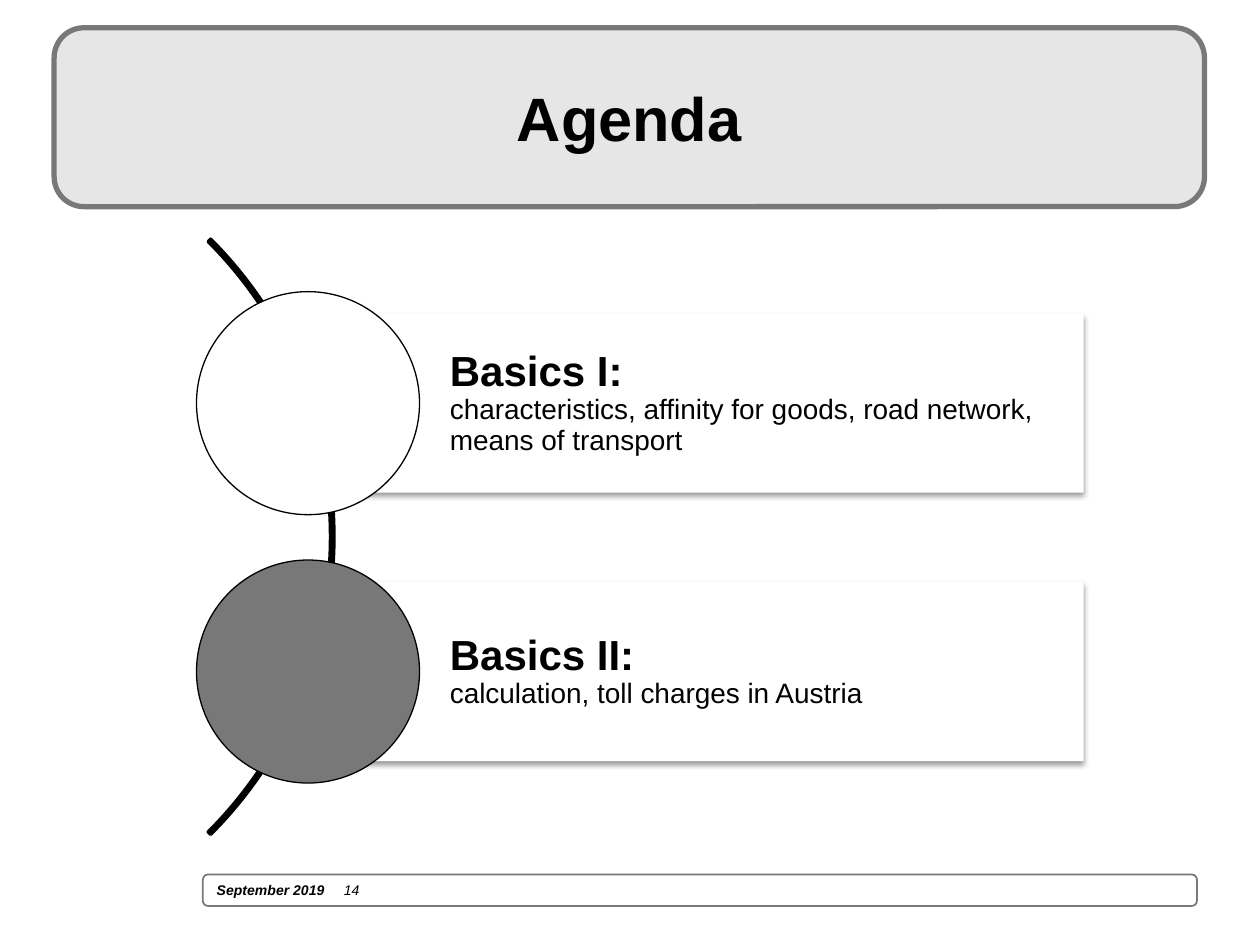
from lxml import etree
from pptx import Presentation
from pptx.dml.color import RGBColor
from pptx.enum.shapes import MSO_SHAPE as Shape
from pptx.enum.text import MSO_ANCHOR as Anchor, PP_ALIGN as Align
from pptx.oxml.ns import qn
from pptx.util import Inches, Pt

BLACK = RGBColor(0x00, 0x00, 0x00)
WHITE = RGBColor(0xFF, 0xFF, 0xFF)
GRAY = RGBColor(0x78, 0x78, 0x78)
LIGHT_GRAY = RGBColor(0xE7, 0xE6, 0xE6)

TOPICS = [
    ("Basics I:", "characteristics, affinity for goods, road network, means of transport", WHITE),
    ("Basics II:", "calculation, toll charges in Austria", GRAY),
]
FIRST_CENTER = 3.2
TOPIC_STEP = 2.13
CARD_HEIGHT = 1.42
CIRCLE_SIZE = 1.77


class AgendaSlide:
    font_name = "Arial"

    def __init__(self, presentation):
        self.slide = presentation.slides.add_slide(presentation.slide_layouts[6])

    def shape(self, kind, left, top, width, height, fill=None, line=None, line_width=1):
        shape = self.slide.shapes.add_shape(
            kind, Inches(left), Inches(top), Inches(width), Inches(height))
        shape.shadow.inherit = False
        if fill is None:
            shape.fill.background()
        else:
            shape.fill.solid()
            shape.fill.fore_color.rgb = fill
        if line is None:
            shape.line.fill.background()
        else:
            shape.line.color.rgb = line
            shape.line.width = Pt(line_width)
        return shape

    def run(self, paragraph, text, size, **styles):
        run = paragraph.add_run()
        run.text = text
        run.font.color.rgb = BLACK
        formats = {"name": self.font_name, "size": Pt(size), **styles}
        for name, value in formats.items():
            setattr(run.font, name, value)

    def text_frame(self, shape, **formats):
        frame = shape.text_frame
        formats = {"word_wrap": True, "vertical_anchor": Anchor.MIDDLE, **formats}
        for name, value in formats.items():
            setattr(frame, name, value)
        frame.paragraphs[0].alignment = Align.LEFT
        return frame

    def drop_shadow(self, shape):
        """Give the shape a soft shadow straight below it."""
        effects = shape._element.spPr.find(qn("a:effectLst"))
        shadow = etree.SubElement(
            effects, qn("a:outerShdw"), blurRad=str(Pt(3.1)), dist=str(Pt(1.6)),
            dir="5400000", rotWithShape="0")
        color = etree.SubElement(shadow, qn("a:srgbClr"), val=str(BLACK))
        etree.SubElement(color, qn("a:alpha"), val="38000")

    def title(self, text):
        banner = self.shape(Shape.ROUNDED_RECTANGLE, 0.43, 0.22, 9.13, 1.42,
                            LIGHT_GRAY, GRAY, 3)
        paragraph = self.text_frame(banner).paragraphs[0]
        paragraph.alignment = Align.CENTER
        self.run(paragraph, text, 35, bold=True)

    def footer(self, date, number):
        bar = self.shape(Shape.ROUNDED_RECTANGLE, 1.61, 6.94, 7.89, 0.25, WHITE, GRAY)
        paragraph = self.text_frame(bar).paragraphs[0]
        tabs = etree.SubElement(paragraph._p.get_or_add_pPr(), qn("a:tabLst"))
        etree.SubElement(tabs, qn("a:tab"), pos=str(Inches(1.01)), algn="l")
        self.run(paragraph, date + "\t", 8, bold=True, italic=True)
        self.run(paragraph, number, 8, bold=False, italic=True)

    def arc(self):
        arc = self.shape(Shape.BLOCK_ARC, -4.03, 0.92, 6.68, 6.68, line=BLACK, line_width=2)
        for index, value in enumerate((189, 27, 0.004)):
            arc.adjustments[index] = value

    def topic(self, center, heading, details, color):
        card = self.shape(Shape.RECTANGLE, 2.45, center - CARD_HEIGHT / 2,
                          6.15, CARD_HEIGHT, WHITE)
        self.drop_shadow(card)
        margins = {f"margin_{side}": Inches(0.07) for side in ("top", "right", "bottom")}
        frame = self.text_frame(card, margin_left=Inches(1.12), **margins)
        first, second = frame.paragraphs[0], frame.add_paragraph()
        for paragraph, text, size, bold in ((first, heading, 24, True),
                                            (second, details, 16, False)):
            paragraph.alignment = Align.LEFT
            paragraph.line_spacing = 0.9
            self.run(paragraph, text, size, bold=bold)
        self.shape(Shape.OVAL, 1.56, center - CIRCLE_SIZE / 2,
                   CIRCLE_SIZE, CIRCLE_SIZE, color, BLACK, 0.75)


def main():
    presentation = Presentation()
    presentation.slide_width = Inches(10)
    presentation.slide_height = Inches(7.5)
    agenda = AgendaSlide(presentation)
    agenda.footer("September 2019", "14")
    agenda.title("Agenda")
    agenda.arc()
    for index, topic in enumerate(TOPICS):
        agenda.topic(FIRST_CENTER + index * TOPIC_STEP, *topic)
    presentation.save("out.pptx")


if __name__ == "__main__":
    main()
